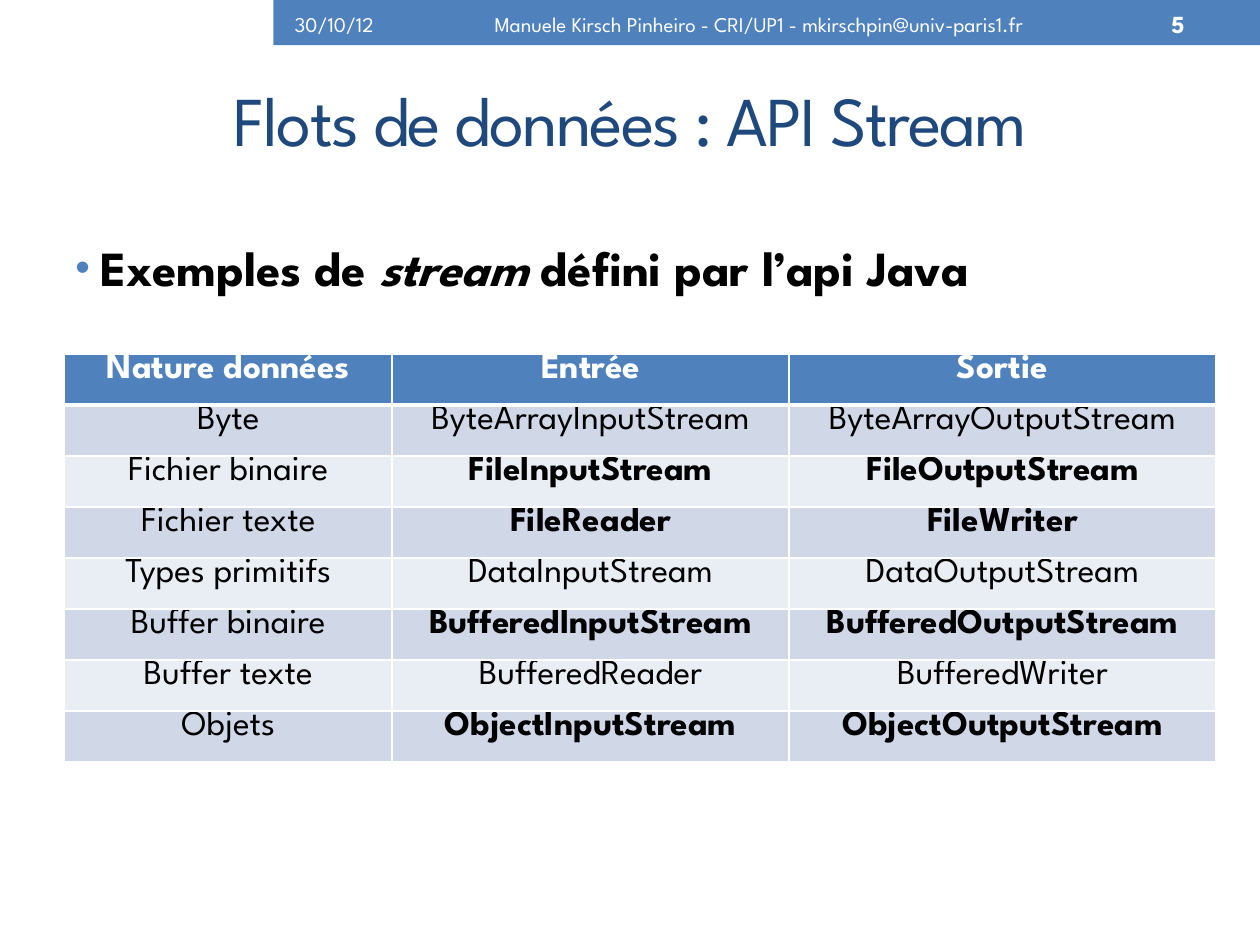
from lxml import etree
from pptx import Presentation
from pptx import util as u
from pptx.dml.color import RGBColor
from pptx.enum import shapes, text
from pptx.oxml.ns import qn

FONT = "League Spartan"
COLORS = {"blue": "4F81BD", "navy": "1F497D", "white": "FFFFFF", "black": "000000",
          "band_dark": "D0D8E8", "band_light": "E9EDF4"}
ALIGN = text.PP_ALIGN
HEADERS = ("Nature données", "Entrée", "Sortie")
STREAMS = (
    ("Byte", "ByteArrayInputStream", "ByteArrayOutputStream", False),
    ("Fichier binaire", "FileInputStream", "FileOutputStream", True),
    ("Fichier texte", "FileReader", "FileWriter", True),
    ("Types primitifs", "DataInputStream", "DataOutputStream", False),
    ("Buffer binaire", "BufferedInputStream", "BufferedOutputStream", True),
    ("Buffer texte", "BufferedReader", "BufferedWriter", False),
    ("Objets", "ObjectInputStream", "ObjectOutputStream", True),
)
COLUMN_WIDTHS = (187.2, 226.8, 244)
ROW_HEIGHT = 29.15


def rgb(name):
    """Return the named colour."""
    return RGBColor.from_string(COLORS[name])


def style(run, size, color, bold=False, italic=False):
    """Format one run of text."""
    run.font.name = FONT
    run.font.size = u.Pt(size)
    run.font.color.rgb = rgb(color)
    run.font.bold = bold
    run.font.italic = italic


def add_label(slide, box, wording, size, color, align, bold=False):
    """Add a vertically centred line of text and return its run."""
    frame = slide.shapes.add_textbox(*map(u.Pt, box)).text_frame
    frame.word_wrap = True
    frame.vertical_anchor = text.MSO_ANCHOR.MIDDLE
    frame.text = wording
    line = frame.paragraphs[0]
    line.alignment = align
    style(line.runs[0], size, color, bold)
    return line.runs[0]


def add_banner(slide):
    """Add the top band with the date, author and page number."""
    band = slide.shapes.add_shape(shapes.MSO_SHAPE.RECTANGLE, u.Pt(156.24), 0,
                                  u.Pt(563.76), u.Pt(25.92))
    band.shadow.inherit = False
    band.fill.solid()
    band.fill.fore_color.rgb = rgb("blue")
    band.line.fill.background()
    for left, width, wording, size, align, bold in (
        (161.28, 79.2, "30/10/12", 12, ALIGN.LEFT, False),
        (229.68, 408.24, "Manuele Kirsch Pinheiro - CRI/UP1 - mkirschpin@univ-paris1.fr",
         12, ALIGN.CENTER, False),
        (643.68, 40.32, "5", 14, ALIGN.RIGHT, True),
    ):
        add_label(slide, (left, 1.44, width, 24.48), wording, size, "white", align, bold)


def add_bullet(slide):
    """Add the bulleted statement above the table."""
    frame = slide.shapes.add_textbox(*map(u.Pt, (36, 126, 648, 383.76))).text_frame
    frame.word_wrap = True
    frame.margin_top = u.Pt(10)
    statement = frame.paragraphs[0]
    props = statement._p.get_or_add_pPr()
    props.set("marL", str(u.Pt(14.4)))
    props.set("indent", str(u.Pt(-14.4)))
    bullet_color = etree.SubElement(props, qn("a:buClr"))
    etree.SubElement(bullet_color, qn("a:srgbClr"), val=COLORS["blue"])
    etree.SubElement(props, qn("a:buSzPct"), val="85000")
    etree.SubElement(props, qn("a:buFont"), typeface="Arial")
    etree.SubElement(props, qn("a:buChar"), char="•")
    for wording, italic in (("Exemples de ", False), ("stream", True),
                            (" défini par l’api Java", False)):
        run = statement.add_run()
        run.text = wording
        style(run, 28, "black", True, italic)


def add_borders(cell, widths):
    """Draw white borders of the given widths ahead of the cell fill."""
    props = cell._tc.get_or_add_tcPr()
    for position, (side, width) in enumerate(widths.items()):
        border = etree.Element(qn(f"a:{side}"), w=str(u.Pt(width)))
        fill = etree.SubElement(border, qn("a:solidFill"))
        etree.SubElement(fill, qn("a:srgbClr"), val=COLORS["white"])
        props.insert(position, border)


def fill_cell(cell, wording, fill, color, bold, widths):
    """Write and format one table cell."""
    cell.margin_left = cell.margin_right = cell.margin_top = cell.margin_bottom = 0
    cell.fill.solid()
    cell.fill.fore_color.rgb = rgb(fill)
    cell.text_frame.text = wording
    entry = cell.text_frame.paragraphs[0]
    entry.alignment = ALIGN.CENTER
    style(entry.runs[0], 20, color, bold)
    add_borders(cell, widths)


def add_streams(slide):
    """Add the table of input and output streams."""
    row_count = len(STREAMS) + 1
    table = slide.shapes.add_table(row_count, len(HEADERS), u.Pt(36.9), u.Pt(202.3),
                                   u.Pt(sum(COLUMN_WIDTHS)),
                                   u.Pt(ROW_HEIGHT * row_count)).table
    for column, width in zip(table.columns, COLUMN_WIDTHS):
        column.width = u.Pt(width)
    for row in table.rows:
        row.height = u.Pt(ROW_HEIGHT)
    thin = {"lnL": 1, "lnR": 1, "lnT": 1, "lnB": 1}
    for column, header in enumerate(HEADERS):
        fill_cell(table.cell(0, column), header, "blue", "white", True, {**thin, "lnB": 3})
    for row, (*entries, key) in enumerate(STREAMS, 1):
        band = "band_dark" if row % 2 else "band_light"
        widths = {**thin, "lnT": 3} if row == 1 else thin
        for column, entry in enumerate(entries):
            fill_cell(table.cell(row, column), entry, band, "black",
                      key and column > 0, widths)


def main():
    """Build the slide and save it."""
    deck = Presentation()
    deck.slide_width, deck.slide_height = u.Pt(720), u.Pt(540)
    slide = deck.slides.add_slide(deck.slide_layouts[6])
    add_banner(slide)
    title = add_label(slide, (36.72, 31.68, 647.28, 72), "Flots de données : API Stream",
                      40, "navy", ALIGN.CENTER)
    title._r.get_or_add_rPr().set("spc", "-100")
    add_bullet(slide)
    add_streams(slide)
    deck.save("out.pptx")


if __name__ == "__main__":
    main()
